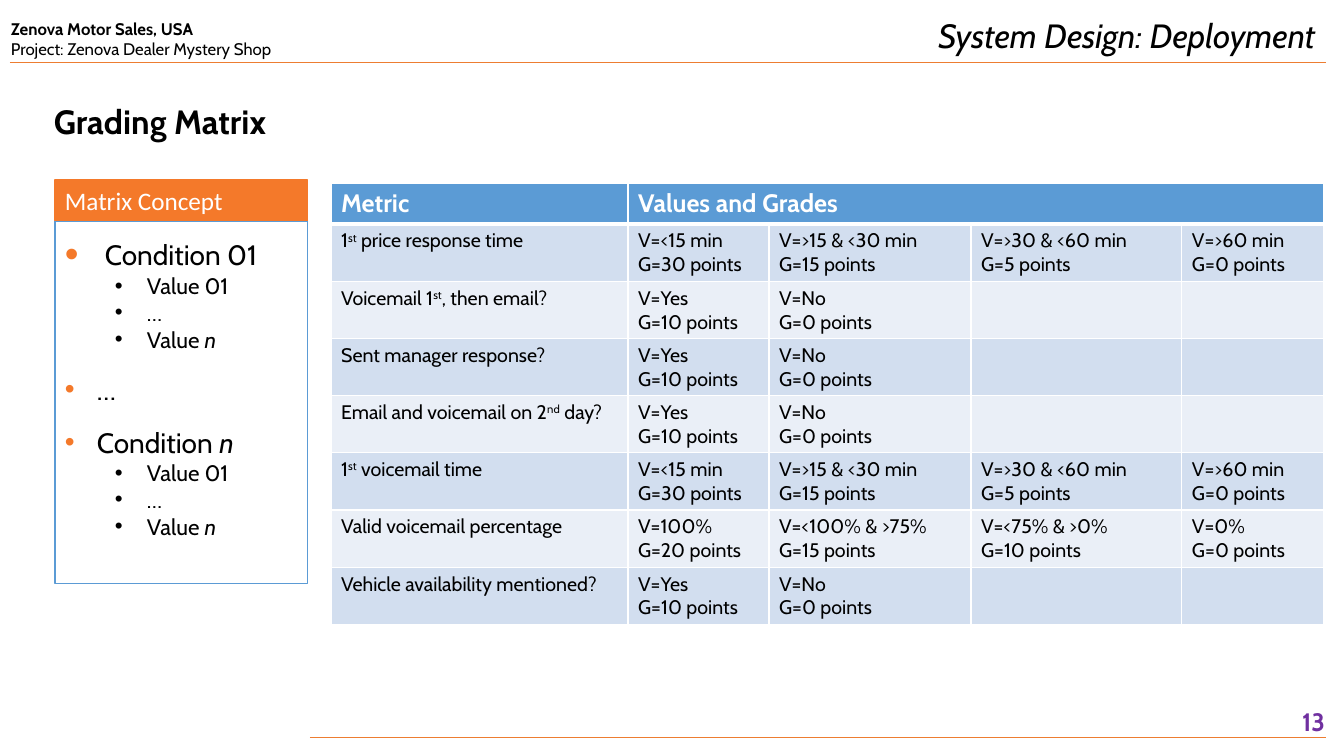
from lxml import etree
from pptx import Presentation
from pptx.dml.color import RGBColor
from pptx.enum.shapes import MSO_CONNECTOR as Connector, MSO_SHAPE as Shape
from pptx.enum.text import MSO_ANCHOR as Anchor, PP_ALIGN as Align
from pptx.oxml.ns import qn
from pptx.util import Inches, Pt

PX_PER_INCH = 100.8
ORANGE, BLUE, PURPLE = "F4792A", "5B9BD5", "7030A0"
RULE, BLACK, WHITE = "ED7D31", "000000", "FFFFFF"
BANDS = "D2DEEF", "EAEFF7"

YES_NO = ["V=Yes\nG=10 points", "V=No\nG=0 points"]
TIMES = ["V=<15 min\nG=30 points", "V=>15 & <30 min\nG=15 points",
         "V=>30 & <60 min\nG=5 points", "V=>60 min\nG=0 points"]
PERCENTAGES = ["V=100%\nG=20 points", "V=<100% & >75%\nG=15 points",
               "V=<75% & >0%\nG=10 points", "V=0%\nG=0 points"]
METRICS = [
    ("1|st| price response time", TIMES),
    ("Voicemail 1|st|, then email?", YES_NO),
    ("Sent manager response?", YES_NO),
    ("Email and voicemail on 2|nd| day?", YES_NO),
    ("1|st| voicemail time", TIMES),
    ("Valid voicemail percentage", PERCENTAGES),
    ("Vehicle availability mentioned?", YES_NO),
]
COLUMN_WIDTHS = 297, 141, 202, 211, 142
HEADER_HEIGHT, ROW_HEIGHT = 41, 57
VALUES = ["Value 01", "…", "Value |n|"]


def px(length):
    """Turn a length in px into EMU."""
    return Inches(length / PX_PER_INCH)


def color(hex_value):
    """Turn a hex string into a colour."""
    return RGBColor.from_string(hex_value)


def add_child(parent, tag, **attributes):
    """Append a drawing element with the given attributes."""
    return etree.SubElement(parent, qn(tag), attributes)


def write(paragraph, text, size=14, hue=BLACK, font="Cabin", bold=False,
          italic=False, align=Align.LEFT, accent="super"):
    """Fill a paragraph; parts between bars are superscript or italic."""
    paragraph.alignment = align
    for index, part in enumerate(text.split("|")):
        if not part:
            continue
        accented = index % 2 == 1
        run = paragraph.add_run()
        run.text = part
        run.font.size, run.font.name = Pt(size), font
        run.font.bold = bold
        run.font.italic = italic or (accented and accent == "italic")
        run.font.color.rgb = color(hue)
        if accented and accent == "super":
            run.font._element.set("baseline", "30000")


def write_lines(frame, text, **style):
    """Write each line of the text as a paragraph of the frame."""
    for index, line in enumerate(text.split("\n")):
        paragraph = frame.add_paragraph() if index else frame.paragraphs[0]
        write(paragraph, line, **style)


def add_label(slide, box, text, **style):
    """Place a wrapping text box."""
    frame = slide.shapes.add_textbox(*map(px, box)).text_frame
    frame.word_wrap = True
    write_lines(frame, text, **style)
    return frame


def add_rule(slide, left, right, y):
    """Draw a thin horizontal line."""
    rule = slide.shapes.add_connector(Connector.STRAIGHT, px(left), px(y), px(right), px(y))
    rule.line.color.rgb = color(RULE)
    rule.line.width = Pt(0.5)
    add_child(rule._element.spPr, "a:effectLst")


def add_panel(slide, box, line, fill=None):
    """Draw a rectangle and return its text frame."""
    panel = slide.shapes.add_shape(Shape.RECTANGLE, *map(px, box))
    panel.shadow.inherit = False
    panel.line.color.rgb = color(line)
    panel.line.width = Pt(0.75)
    if fill:
        panel.fill.solid()
        panel.fill.fore_color.rgb = color(fill)
    else:
        panel.fill.background()
    panel.text_frame.word_wrap = True
    return panel.text_frame


def add_bullet(paragraph, margin, hang, hue, percent=100):
    """Give a paragraph a hanging round bullet."""
    props = paragraph._p.get_or_add_pPr()
    props.set("marL", str(px(margin)))
    props.set("indent", str(-px(hang)))
    add_child(add_child(props, "a:buClr"), "a:srgbClr", val=hue)
    add_child(props, "a:buSzPct", val=str(percent * 1000))
    add_child(props, "a:buFont", typeface="Arial")
    add_child(props, "a:buChar", char="•")


def add_header(slide, left, top, width):
    """Place the client, project and section title above a rule."""
    add_label(slide, (left - 9, top, 346, 50), "Zenova Motor Sales, USA", size=12, bold=True)
    project = slide.shapes[-1].text_frame.add_paragraph()
    write(project, "Project: Zenova Dealer Mystery Shop", size=12)
    add_label(slide, (left + width - 571, top - 4, 570, 50), "System Design: Deployment",
              size=24, italic=True, align=Align.RIGHT)
    add_rule(slide, left, left + width, top + 48)


def add_footer(slide, left, top, width):
    """Place the page number above a rule."""
    add_label(slide, (left + width - 293, top, 302, 40), "13", size=18, hue=PURPLE,
              bold=True, align=Align.RIGHT)
    add_rule(slide, left, left + width, top + 36)


def add_concept(slide, left, top, width, height):
    """Place the matrix concept panel with its bulleted conditions."""
    list_frame = add_panel(slide, (left, top + 41, width, height - 41), BLUE)
    list_frame.vertical_anchor = Anchor.TOP
    list_frame.margin_top = px(16)
    conditions = [("Condition 01", VALUES), ("…", []), ("Condition |n|", VALUES)]
    for index, (condition, values) in enumerate(conditions):
        first = index == 0
        paragraph = list_frame.paragraphs[0] if first else list_frame.add_paragraph()
        margin = 40 if first else 32
        add_bullet(paragraph, margin, margin, ORANGE, 140 if first else 100)
        if first:
            paragraph.space_after = Pt(1)
        else:
            paragraph.space_before = Pt(14)
        write(paragraph, condition, size=20, accent="italic")
        for value in values:
            paragraph = list_frame.add_paragraph()
            paragraph.level = 1
            add_bullet(paragraph, 82, 32, BLACK)
            write(paragraph, value, size=16, accent="italic")
    title_frame = add_panel(slide, (left, top, width, 41), ORANGE, ORANGE)
    title_frame.vertical_anchor = Anchor.MIDDLE
    write_lines(title_frame, "Matrix Concept", size=18, hue=WHITE, font="Calibri")


def style_cell(cell, fill, top=1, bottom=1):
    """Give a cell white borders and a fill."""
    props = cell._tc.get_or_add_tcPr()
    for tag, width in (("a:lnL", 1), ("a:lnR", 1), ("a:lnT", top), ("a:lnB", bottom)):
        border = add_child(props, tag, w=str(Pt(width)))
        add_child(add_child(border, "a:solidFill"), "a:srgbClr", val=WHITE)
    cell.fill.solid()
    cell.fill.fore_color.rgb = color(fill)


def add_grades(slide, left, top):
    """Place the table of metrics with their values and grades."""
    width = sum(COLUMN_WIDTHS)
    height = HEADER_HEIGHT + ROW_HEIGHT * len(METRICS)
    grades = slide.shapes.add_table(len(METRICS) + 1, len(COLUMN_WIDTHS),
                                    *map(px, (left, top, width, height))).table
    grades.horz_banding = False
    for column, column_width in zip(grades.columns, COLUMN_WIDTHS):
        column.width = px(column_width)
    for index, row in enumerate(grades.rows):
        row.height = px(ROW_HEIGHT if index else HEADER_HEIGHT)
        fill = BANDS[(index - 1) % 2] if index else BLUE
        for cell in row.cells:
            style_cell(cell, fill, 3 if index == 1 else 1, 1 if index else 3)
    grades.cell(0, 1).merge(grades.cell(0, len(COLUMN_WIDTHS) - 1))
    for column, heading in enumerate(("Metric", "Values and Grades")):
        write_lines(grades.cell(0, column).text_frame, heading, size=18, hue=WHITE, bold=True)
    for row, (metric, values) in enumerate(METRICS, 1):
        for column, text in enumerate([metric, *values]):
            write_lines(grades.cell(row, column).text_frame, text)


def main():
    """Build the grading matrix slide and save it."""
    deck = Presentation()
    deck.slide_width, deck.slide_height = px(1344), px(756)
    slide = deck.slides.add_slide(deck.slide_layouts[6])
    add_header(slide, 10, 14, 1316)
    add_footer(slide, 310, 701, 1016)
    add_label(slide, (44, 96, 267, 50), "Grading Matrix", size=24, bold=True)
    add_concept(slide, 55, 180, 253, 404)
    add_grades(slide, 331, 183)
    deck.save("out.pptx")


if __name__ == "__main__":
    main()
